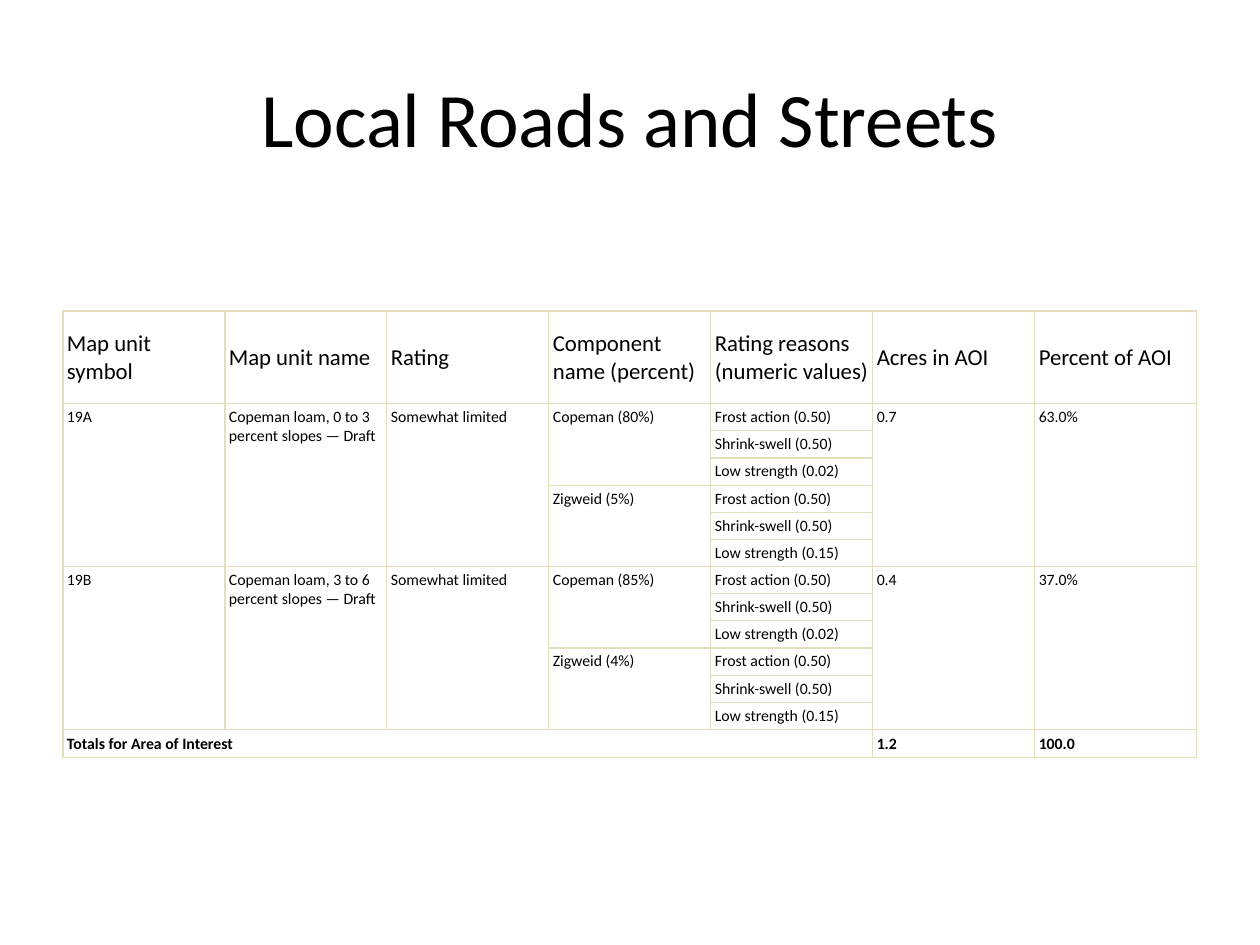
from dataclasses import dataclass

from lxml import etree
from pptx import Presentation
from pptx import util as u
from pptx.dml.color import RGBColor
from pptx.enum import text
from pptx.oxml import ns


@dataclass(frozen=True)
class Theme:
    font: str = "Calibri"
    ink: str = "000000"
    paper: str = "FFFFFF"
    rule: str = "E5DEBC"
    title_size: float = 44
    header_size: float = 13
    body_size: float = 9
    rule_width: float = 0.75


THEME = Theme()
HEADERS = ["Map unit symbol", "Map unit name", "Rating", "Component name (percent)",
           "Rating reasons (numeric values)", "Acres in AOI", "Percent of AOI"]
COMPONENT_COLUMN, REASON_COLUMN, ACRES_COLUMN, PERCENT_COLUMN = 3, 4, 5, 6
COPEMAN_REASONS = ["Frost action (0.50)", "Shrink-swell (0.50)", "Low strength (0.02)"]
ZIGWEID_REASONS = COPEMAN_REASONS[:2] + ["Low strength (0.15)"]
# Each unit: values by column, then its components with their reasons
MAP_UNITS = [
    ({0: "19A", 1: "Copeman loam, 0 to 3 percent slopes — Draft", 2: "Somewhat limited",
      ACRES_COLUMN: "0.7", PERCENT_COLUMN: "63.0%"},
     {"Copeman (80%)": COPEMAN_REASONS, "Zigweid (5%)": ZIGWEID_REASONS}),
    ({0: "19B", 1: "Copeman loam, 3 to 6 percent slopes — Draft", 2: "Somewhat limited",
      ACRES_COLUMN: "0.4", PERCENT_COLUMN: "37.0%"},
     {"Copeman (85%)": COPEMAN_REASONS, "Zigweid (4%)": ZIGWEID_REASONS}),
]
ROWS_PER_UNIT = 6
ROW_COUNT = 2 + ROWS_PER_UNIT * len(MAP_UNITS)
TABLE_WIDTH = u.Cm(22.86)
HEADER_HEIGHT, UNIT_HEIGHT, TOTAL_HEIGHT = u.Cm(1.87), u.Cm(3.27), u.Cm(0.55)
CELL_MARGIN = u.Cm(0.08)


def write_text(frame, words, *, size, bold=False, align=text.PP_ALIGN.LEFT):
    paragraph = frame.paragraphs[0]
    paragraph.alignment = align
    run = paragraph.add_run()
    run.text = words
    run.font.name = THEME.font
    run.font.size = u.Pt(size)
    run.font.bold = bold
    run.font.color.rgb = RGBColor.from_string(THEME.ink)


def add_title(slide, words):
    title = slide.shapes.title
    title.left, title.top = u.Cm(1.27), u.Cm(0.76)
    title.width, title.height = u.Cm(22.86), u.Cm(3.18)
    title.text_frame.vertical_anchor = text.MSO_ANCHOR.MIDDLE
    write_text(title.text_frame, words, size=THEME.title_size, align=text.PP_ALIGN.CENTER)


def style_cell(cell):
    """Give the cell its margins, four ruled borders and fill."""
    cell.margin_left = cell.margin_right = CELL_MARGIN
    cell.margin_top = cell.margin_bottom = CELL_MARGIN
    properties = cell._tc.get_or_add_tcPr()
    for side in ("lnL", "lnR", "lnT", "lnB"):
        line = etree.SubElement(properties, ns.qn(f"a:{side}"), w=str(u.Pt(THEME.rule_width)))
        fill = etree.SubElement(line, ns.qn("a:solidFill"))
        etree.SubElement(fill, ns.qn("a:srgbClr"), val=THEME.rule)
    # The schema wants the fill after the borders
    cell.fill.solid()
    cell.fill.fore_color.rgb = RGBColor.from_string(THEME.paper)


def fill_cell(table, row, column, words, *, rows=1, columns=1, size=THEME.body_size, bold=False):
    """Write a cell, merged over the given number of rows and columns."""
    cell = table.cell(row, column)
    if rows > 1 or columns > 1:
        cell.merge(table.cell(row + rows - 1, column + columns - 1))
    write_text(cell.text_frame, words, size=size, bold=bold)
    return cell


def add_empty_table(slide):
    height = HEADER_HEIGHT + UNIT_HEIGHT * len(MAP_UNITS) + TOTAL_HEIGHT
    table = slide.shapes.add_table(ROW_COUNT, len(HEADERS), u.Cm(1.27), u.Cm(6.27),
                                   TABLE_WIDTH, height).table
    table.first_row = table.horz_banding = False
    for column in table.columns:
        column.width = TABLE_WIDTH // len(HEADERS)
    for row in table.rows:
        row.height = UNIT_HEIGHT // ROWS_PER_UNIT
    table.rows[0].height = HEADER_HEIGHT
    table.rows[ROW_COUNT - 1].height = TOTAL_HEIGHT
    for cell in table.iter_cells():
        style_cell(cell)
    return table


def fill_header(table):
    for column, words in enumerate(HEADERS):
        cell = fill_cell(table, 0, column, words, size=THEME.header_size)
        cell.vertical_anchor = text.MSO_ANCHOR.MIDDLE


def fill_map_unit(table, row, values, components):
    for column, words in values.items():
        fill_cell(table, row, column, words, rows=ROWS_PER_UNIT)
    for component, reasons in components.items():
        fill_cell(table, row, COMPONENT_COLUMN, component, rows=len(reasons))
        for reason in reasons:
            fill_cell(table, row, REASON_COLUMN, reason)
            row += 1


def fill_totals(table):
    row = ROW_COUNT - 1
    totals = [(0, "Totals for Area of Interest", ACRES_COLUMN),
              (ACRES_COLUMN, "1.2", 1), (PERCENT_COLUMN, "100.0", 1)]
    for column, words, columns in totals:
        cell = fill_cell(table, row, column, words, columns=columns, bold=True)
        cell.margin_top = u.Cm(0.1)


def main():
    presentation = Presentation()
    presentation.slide_width, presentation.slide_height = u.Cm(25.4), u.Cm(19.05)
    slide = presentation.slides.add_slide(presentation.slide_layouts.get_by_name("Title Only"))
    add_title(slide, "Local Roads and Streets")
    table = add_empty_table(slide)
    fill_header(table)
    for index, (values, components) in enumerate(MAP_UNITS):
        fill_map_unit(table, 1 + index * ROWS_PER_UNIT, values, components)
    fill_totals(table)
    presentation.save("out.pptx")


if __name__ == "__main__":
    main()
